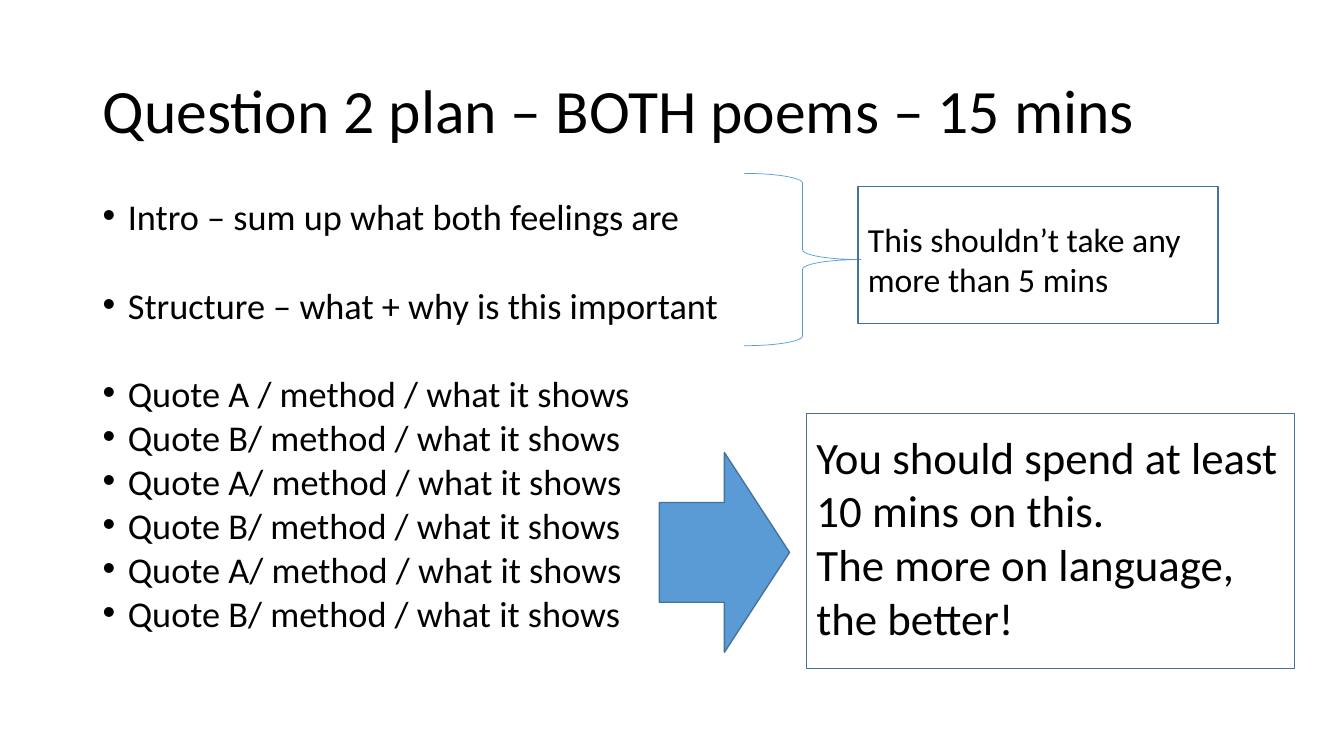
from dataclasses import dataclass

from lxml.etree import SubElement
from pptx import Presentation
from pptx.dml.color import RGBColor
from pptx.enum.shapes import MSO_SHAPE
from pptx.enum.text import MSO_ANCHOR, PP_ALIGN
from pptx.oxml.ns import qn
from pptx.shapes.autoshape import Shape
from pptx.slide import Slide
from pptx.text.text import _Paragraph
from pptx.util import Inches, Pt

BLACK = RGBColor(0x00, 0x00, 0x00)
BLUE = RGBColor(0x5B, 0x9B, 0xD5)
NAVY = RGBColor(0x43, 0x73, 0x9E)
FONT = "Calibri"
TIGHT = 9.6  # points before a bullet
WIDE = 41.3  # points before a bullet that opens a new part


@dataclass
class Box:
    left: float
    top: float
    width: float
    height: float


@dataclass
class Note:
    box: Box
    inset: float
    size: float
    lines: list[str]


@dataclass
class Bullet:
    text: str
    before: float = TIGHT


TITLE = "Question 2 plan – BOTH poems – 15 mins"
BULLETS = [
    Bullet("Intro – sum up what both feelings are"),
    Bullet("Structure – what + why is this important", WIDE),
    Bullet("Quote A / method / what it shows", WIDE),
    *[Bullet(f"Quote {poem}/ method / what it shows") for poem in "BABAB"],
]
NOTES = [
    Note(Box(8.51, 1.85, 3.57, 1.36), 0.32, 24,
         ["This shouldn’t take any more than 5 mins"]),
    Note(Box(8, 4.1, 4.84, 2.53), 0.16, 32,
         ["You should spend at least 10 mins on this.",
          "The more on language, the better!"]),
]


def place(shape: Shape, box: Box) -> None:
    shape.left, shape.top = Inches(box.left), Inches(box.top)
    shape.width, shape.height = Inches(box.width), Inches(box.height)


def write(para: _Paragraph, text: str, size: float) -> None:
    para.alignment = PP_ALIGN.LEFT
    run = para.add_run()
    run.text = text
    run.font.name = FONT
    run.font.size = Pt(size)
    run.font.color.rgb = BLACK


def draw(slide: Slide, kind: MSO_SHAPE, box: Box, line: RGBColor,
         weight: float, fill: RGBColor | None = None) -> Shape:
    shape = slide.shapes.add_shape(
        kind, Inches(box.left), Inches(box.top),
        Inches(box.width), Inches(box.height))
    shape.shadow.inherit = False
    if fill is None:
        shape.fill.background()
    else:
        shape.fill.solid()
        shape.fill.fore_color.rgb = fill
    shape.line.color.rgb = line
    shape.line.width = Pt(weight)
    return shape


def add_title(slide: Slide) -> None:
    title = slide.shapes.title
    place(title, Box(0.92, 0.4, 11.5, 1.45))
    frame = title.text_frame
    frame.vertical_anchor = MSO_ANCHOR.MIDDLE
    frame.paragraphs[0].line_spacing = 0.9
    write(frame.paragraphs[0], TITLE, 44)


def add_plan(slide: Slide) -> None:
    body = slide.shapes.add_textbox(
        Inches(0.92), Inches(2), Inches(11.5), Inches(4.76))
    frame = body.text_frame
    frame.word_wrap = True
    for i, item in enumerate(BULLETS):
        para = frame.add_paragraph() if i else frame.paragraphs[0]
        para.line_spacing = 0.7
        para.space_before = Pt(item.before)
        write(para, item.text, 25.9)
        # Hanging bullet
        props = para._p.get_or_add_pPr()
        props.set("marL", str(Inches(0.25)))
        props.set("indent", str(-Inches(0.25)))
        SubElement(props, qn("a:buFont")).set("typeface", "Arial")
        SubElement(props, qn("a:buChar")).set("char", "•")


def add_note(slide: Slide, note: Note) -> None:
    shape = draw(slide, MSO_SHAPE.RECTANGLE, note.box, NAVY, 1)
    frame = shape.text_frame
    frame.word_wrap = True
    frame.vertical_anchor = MSO_ANCHOR.TOP
    frame.margin_top = Inches(note.inset)
    for i, line in enumerate(note.lines):
        para = frame.add_paragraph() if i else frame.paragraphs[0]
        write(para, line, note.size)


def main() -> None:
    deck = Presentation()
    deck.slide_width, deck.slide_height = Inches(13.33), Inches(7.5)
    slide = deck.slides.add_slide(deck.slide_layouts[5])

    # Title and plan
    add_title(slide)
    add_plan(slide)

    # Timing notes with their brace and arrow
    draw(slide, MSO_SHAPE.RIGHT_BRACE, Box(7.38, 1.72, 1.16, 1.71), BLUE, 0.5)
    for note in NOTES:
        add_note(slide, note)
    draw(slide, MSO_SHAPE.RIGHT_ARROW, Box(6.54, 4.49, 1.29, 1.98),
         NAVY, 1, BLUE)

    deck.save("out.pptx")


if __name__ == "__main__":
    main()
